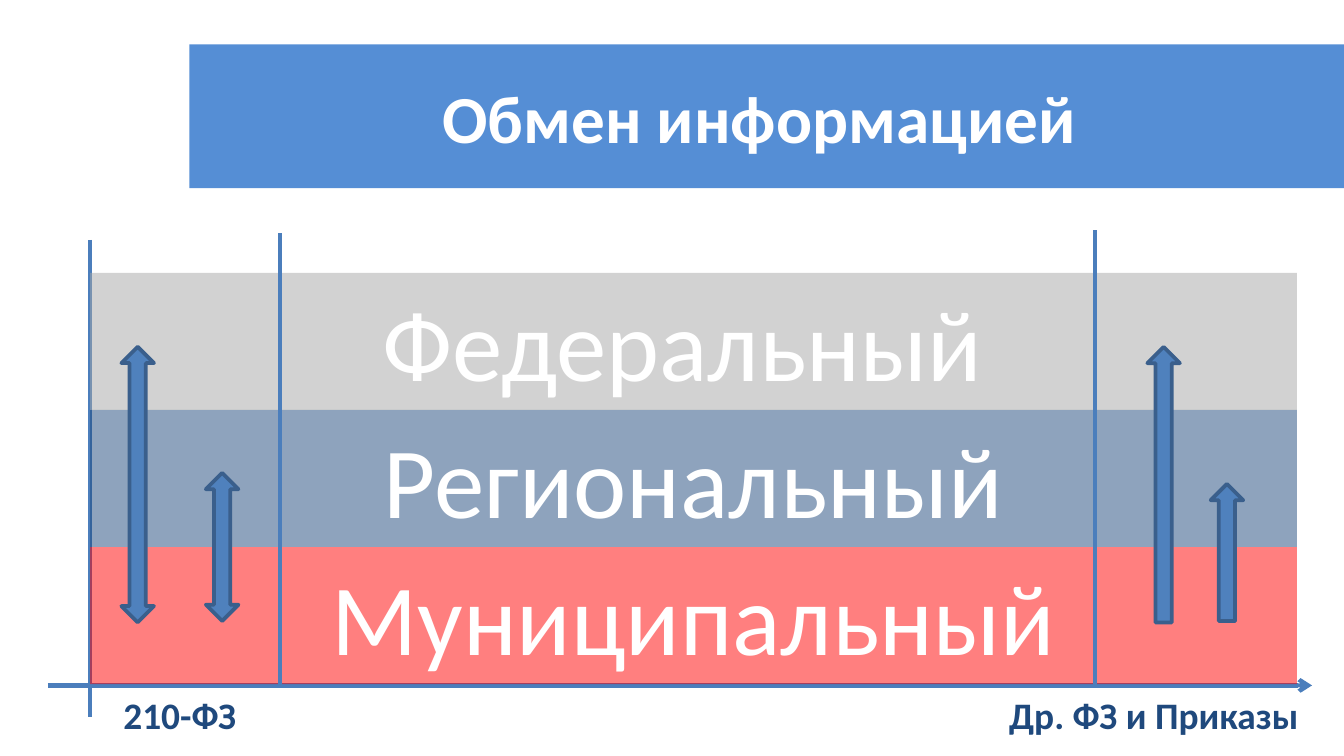
from collections import namedtuple

from lxml.etree import SubElement
from pptx import Presentation
from pptx.dml.color import RGBColor
from pptx.enum.shapes import MSO_CONNECTOR, MSO_SHAPE
from pptx.enum.text import MSO_ANCHOR, MSO_AUTO_SIZE, PP_ALIGN
from pptx.oxml.ns import qn
from pptx.util import Inches, Pt

WIDTH = 10
HEIGHT = WIDTH * 9 / 16
COLORS = {
    "header": "558ED5",
    "white": "FFFFFF",
    "axis": "4B7EBC",
    "federal": "A6A6A6",
    "regional": "1F497D",
    "municipal": "FF0000",
    "arrow": "4F81BD",
    "arrow_edge": "3A5F8C",
    "label": "1F497D",
}
LEVELS = [("Федеральный ", "federal"), ("Региональный", "regional"), ("Муниципальный", "municipal")]
AXES = [(0, -0.24, 0, 3.24, False), (-3.5, 3.01, 101.25, 3.01, True)]
DIVIDERS = [(15.75, -0.29, 15.75, 3.03, False), (83.3, -0.31, 83.3, 3.01, False)]
EXCHANGES = [
    (2.6, 0.54, 2.01, MSO_SHAPE.UP_DOWN_ARROW, 0),
    (9.6, 1.46, 1.08, MSO_SHAPE.UP_DOWN_ARROW, 0),
    (87.6, 0.54, 2.01, MSO_SHAPE.DOWN_ARROW, 180),
    (92.85, 1.54, 1, MSO_SHAPE.DOWN_ARROW, 180),
]
LAWS = [("210-ФЗ", 0.9, 13.1), ("Др. ФЗ и Приказы", 74.5, 27.3)]

Box = namedtuple("Box", "left top width height")


def color(name):
    return RGBColor.from_string(COLORS[name])


def apply(target, values):
    for attribute, value in values.items():
        setattr(target, attribute, value)


def write(holder, text, size, ink, bold=False, anchor=MSO_ANCHOR.MIDDLE):
    frame = holder.text_frame
    apply(frame, {"word_wrap": True, "auto_size": MSO_AUTO_SIZE.NONE, "vertical_anchor": anchor})
    paragraph = frame.paragraphs[0]
    paragraph.alignment = PP_ALIGN.CENTER
    run = paragraph.add_run()
    run.text = text
    apply(run.font, {"name": "Calibri", "size": Pt(size), "bold": bold})
    run.font.color.rgb = color(ink)


def paint(area, name):
    area.fill.solid()
    area.fill.fore_color.rgb = color(name)


def place(box, column, row, columns, rows):
    return [Inches(value) for value in (
        box.left + column * box.width / 100,
        box.top + row * box.height / len(LEVELS),
        columns * box.width / 100,
        rows * box.height / len(LEVELS),
    )]


def add_header(slide, box):
    header = slide.shapes.title
    apply(header, {side: Inches(value) for side, value in box._asdict().items()})
    paint(header, "header")
    write(header, "Обмен информацией ", 36, "white", bold=True)


def add_rules(slide, box, rules):
    for start_column, start_row, end_column, end_row, arrowed in rules:
        start = place(box, start_column, start_row, 0, 0)[:2]
        end = place(box, end_column, end_row, 0, 0)[:2]
        rule = slide.shapes.add_connector(MSO_CONNECTOR.STRAIGHT, *start, *end)
        rule.line.width = Pt(2.25)
        rule.line.color.rgb = color("axis")
        if arrowed:
            SubElement(rule.line._get_or_add_ln(), qn("a:tailEnd"), type="arrow")
        SubElement(rule._element.spPr, qn("a:effectLst"))


def add_levels(slide, box):
    for row, (text, name) in reversed(list(enumerate(LEVELS))):
        level = slide.shapes.add_shape(MSO_SHAPE.RECTANGLE, *place(box, 0, row, 100, 1))
        level.shadow.inherit = False
        paint(level, name)
        tint = level._element.spPr.find(qn("a:solidFill"))[0]
        SubElement(tint, qn("a:alpha"), val="50000")
        level.line.fill.background()
        write(level, text, 54, "white")


def add_exchanges(slide, box):
    for column, row, rows, kind, rotation in EXCHANGES:
        exchange = slide.shapes.add_shape(kind, *place(box, column, row, 2.7, rows))
        exchange.shadow.inherit = False
        exchange.rotation = rotation
        paint(exchange, "arrow")
        exchange.line.width = Pt(2)
        exchange.line.color.rgb = color("arrow_edge")


def add_laws(slide, box):
    for text, column, columns in LAWS:
        law = slide.shapes.add_textbox(*place(box, column, 3.01, columns, 0.43))
        write(law, text, 20, "label", bold=True, anchor=MSO_ANCHOR.TOP)


def add_diagram(slide, box):
    add_rules(slide, box, AXES)
    add_levels(slide, box)
    add_rules(slide, box, DIVIDERS)
    add_exchanges(slide, box)
    add_laws(slide, box)


def main():
    deck = Presentation()
    apply(deck, {"slide_width": Inches(WIDTH), "slide_height": Inches(HEIGHT)})
    slide = deck.slides.add_slide(deck.slide_layouts[5])
    add_header(slide, Box(1.41, 0.33, WIDTH - 1.41, 1.07))
    add_diagram(slide, Box(0.67, 2.03, 8.98, 3.06))
    deck.save("out.pptx")


if __name__ == "__main__":
    main()
